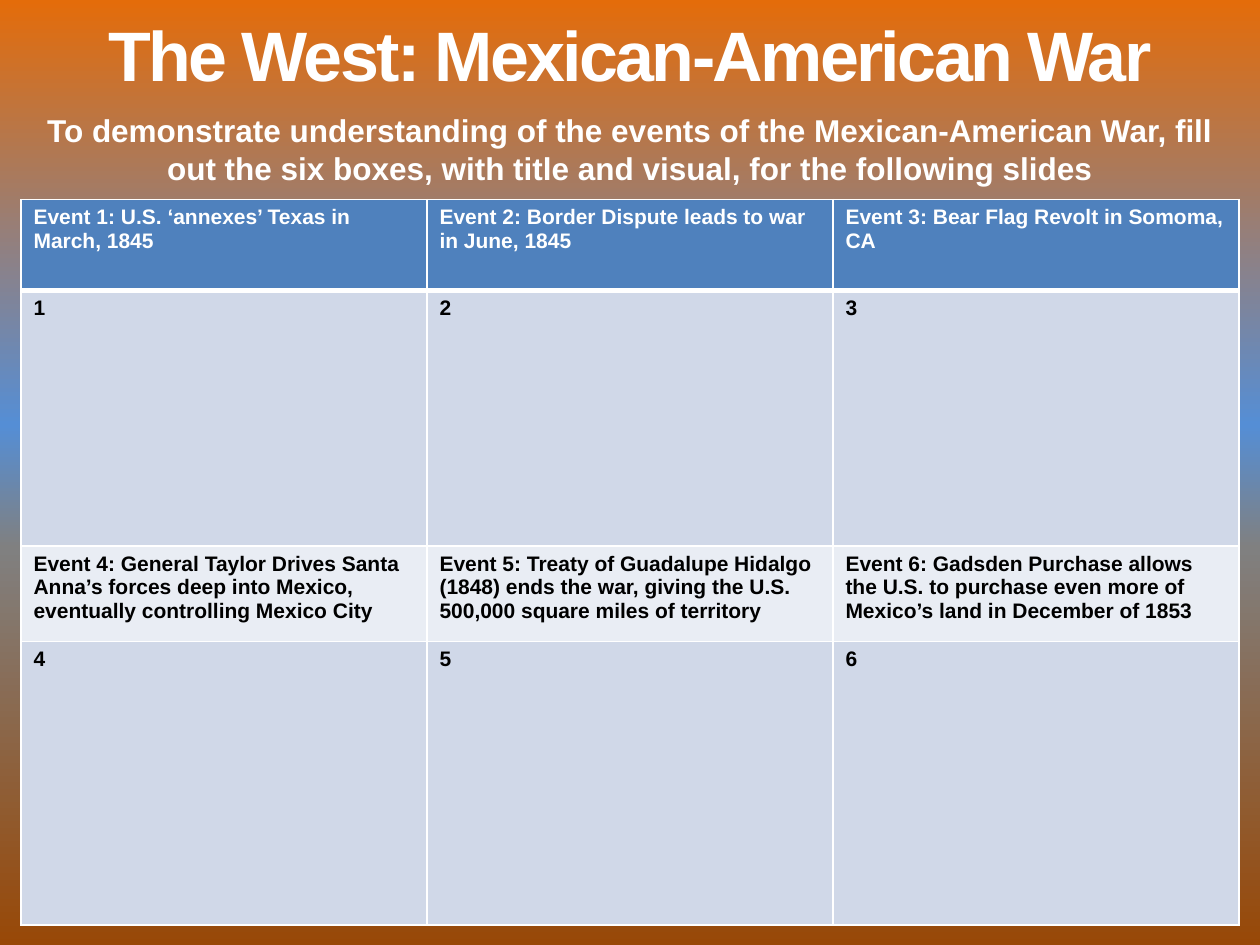
import dataclasses

import lxml.etree
import pptx
import pptx.dml.color
import pptx.enum.text
import pptx.oxml.ns
import pptx.util

Pt = pptx.util.Pt
qn = pptx.oxml.ns.qn


@dataclasses.dataclass
class Theme:
    font: str = "Arial"
    title: float = 40
    intro: float = 18
    body: float = 12
    white: str = "FFFFFF"
    black: str = "000000"
    header: str = "4F81BD"
    dark_band: str = "D0D8E8"
    light_band: str = "E9EDF4"
    background: tuple = ((0, "E46C0A"), (45, "558ED5"), (58, "808080"), (100, "984807"))


theme = Theme()


def write(tf, text, size, color, align=None, before=None, spacing=None):
    tf.word_wrap = True
    p = tf.paragraphs[0]
    p.alignment = align
    if before is not None:
        p.space_before = Pt(before)
    r = p.add_run()
    r.text = text
    r.font.name = theme.font
    r.font.size = Pt(size)
    r.font.bold = True
    r.font.color.rgb = pptx.dml.color.RGBColor.from_string(color)
    if spacing is not None:
        r.font._element.set("spc", str(int(spacing * 100)))


def set_border(cell, side, width):
    ln = lxml.etree.SubElement(cell._tc.get_or_add_tcPr(), qn(f"a:ln{side}"), w=str(Pt(width)))
    fill = lxml.etree.SubElement(ln, qn("a:solidFill"))
    lxml.etree.SubElement(fill, qn("a:srgbClr"), val=theme.white)


prs = pptx.Presentation()
prs.slide_width, prs.slide_height = Pt(720), Pt(540)
s = prs.slides.add_slide(prs.slide_layouts[6])
center = pptx.enum.text.PP_ALIGN.CENTER

# Background gradient, top to bottom
fill = s.background.fill
fill.gradient()
fill.gradient_angle = 270
stops = s.element.find(".//" + qn("a:gsLst"))
for stop in list(stops):
    stops.remove(stop)
for position, color in theme.background:
    stop = lxml.etree.SubElement(stops, qn("a:gs"), pos=str(position * 1000))
    lxml.etree.SubElement(stop, qn("a:srgbClr"), val=color)

# Title
sp = s.shapes.add_textbox(Pt(0), Pt(3), Pt(720), Pt(55.5))
write(sp.text_frame, "The West: Mexican-American War", theme.title, theme.white,
      align=center, spacing=-1.5)

# Event table: headings alternate with boxes to fill in
rows = [
    (52, theme.header, theme.white,
     ["Event 1: U.S. ‘annexes’ Texas in March, 1845",
      "Event 2: Border Dispute leads to war in June, 1845",
      "Event 3: Bear Flag Revolt in Somoma, CA"]),
    (146, theme.dark_band, theme.black, ["1", "2", "3"]),
    (54.5, theme.light_band, theme.black,
     ["Event 4: General Taylor Drives Santa Anna’s forces deep into Mexico, "
      "eventually controlling Mexico City",
      "Event 5: Treaty of Guadalupe Hidalgo (1848) ends the war, giving the U.S. "
      "500,000 square miles of territory",
      "Event 6: Gadsden Purchase allows the U.S. to purchase even more of "
      "Mexico’s land in December of 1853"]),
    (162, theme.dark_band, theme.black, ["4", "5", "6"]),
]
height = sum(row[0] for row in rows)
table = s.shapes.add_table(len(rows), 3, Pt(12), Pt(114), Pt(696), Pt(height)).table
for column in table.columns:
    column.width = Pt(232)
for i, (row_height, band, color, texts) in enumerate(rows):
    table.rows[i].height = Pt(row_height)
    for j, text in enumerate(texts):
        cell = table.cell(i, j)
        write(cell.text_frame, text, theme.body, color)
        for side in "LRTB":
            under_header = (i, side) in ((0, "B"), (1, "T"))
            set_border(cell, side, 3 if under_header else 1)
        cell.fill.solid()
        cell.fill.fore_color.rgb = pptx.dml.color.RGBColor.from_string(band)

# Instructions
sp = s.shapes.add_textbox(Pt(6), Pt(60), Pt(708), Pt(54))
write(sp.text_frame,
      "To demonstrate understanding of the events of the Mexican-American War, fill out "
      "the six boxes, with title and visual, for the following slides",
      theme.intro, theme.white, align=center, before=3.6)

prs.save("out.pptx")
